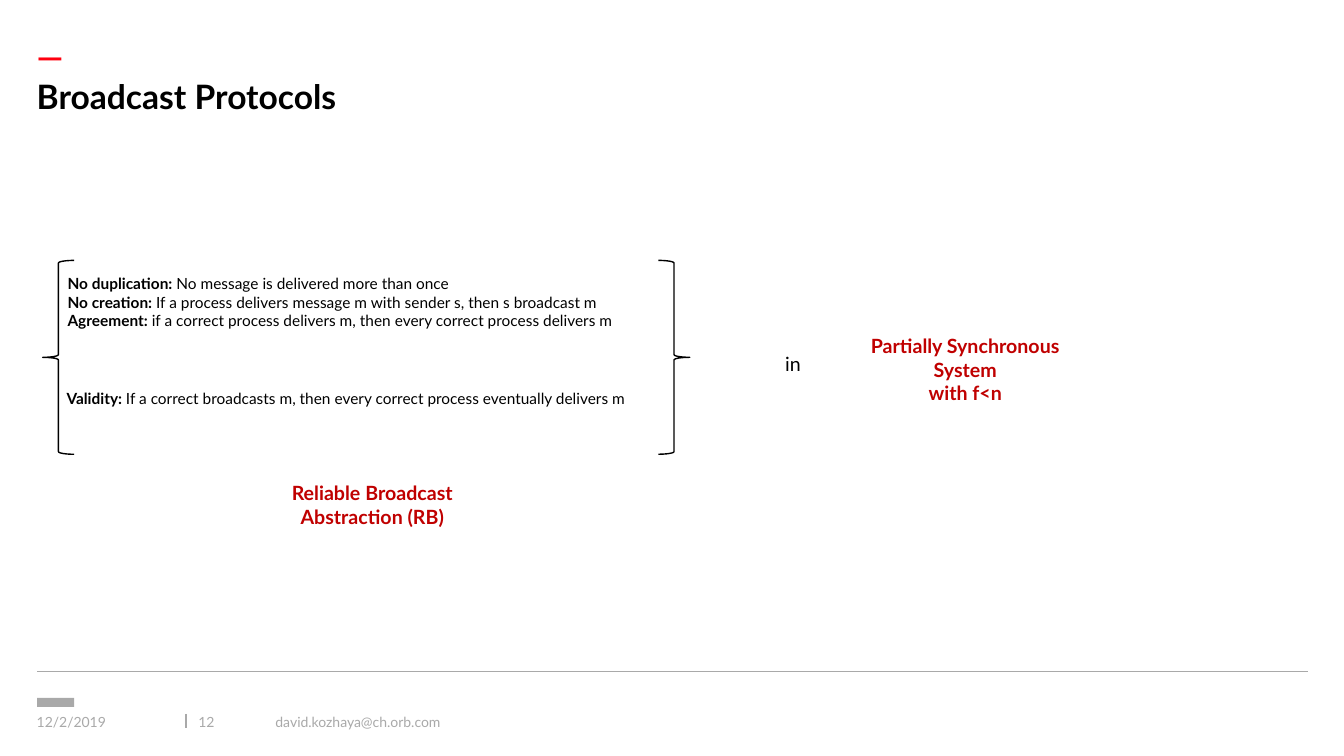
import pptx
import pptx.util
import pptx.dml.color
import pptx.enum.shapes
import pptx.enum.text
from dataclasses import dataclass
from lxml import etree

Pt = pptx.util.Pt
SHAPE = pptx.enum.shapes.MSO_SHAPE
ALIGN = pptx.enum.text.PP_ALIGN
ANCHOR = pptx.enum.text.MSO_ANCHOR


@dataclass(frozen=True)
class Theme:
    font: str = "Lato"
    ink: str = "000000"
    accent: str = "FF000F"
    emphasis: str = "C00000"
    muted: str = "A9A9A9"
    title: float = 24
    label: float = 14
    body: float = 11
    footer: float = 10


T = Theme()


def rgb(value):
    return pptx.dml.color.RGBColor.from_string(value)


def add_text(s, box, paragraphs, size=T.body, color=T.ink, bold=False,
             align=ALIGN.LEFT, anchor=ANCHOR.TOP, inset=0):
    """Each paragraph is a string, or a (bold lead, plain rest) pair."""
    tf = s.shapes.add_textbox(*map(Pt, box)).text_frame
    tf.word_wrap = True
    tf.vertical_anchor = anchor
    tf.margin_left = tf.margin_right = Pt(inset)
    tf.margin_top = tf.margin_bottom = Pt(inset)
    for i, content in enumerate(paragraphs):
        p = tf.paragraphs[0] if i == 0 else tf.add_paragraph()
        p.alignment = align
        if isinstance(content, str):
            runs = [(content, bold)]
        else:
            runs = [(content[0], True), (content[1], False)]
        for text, is_bold in runs:
            r = p.add_run()
            r.text = text
            r.font.name = T.font
            r.font.size = Pt(size)
            r.font.bold = is_bold
            r.font.color.rgb = rgb(color)


def add_rule(s, x1, y1, x2, y2):
    line = s.shapes.add_connector(
        pptx.enum.shapes.MSO_CONNECTOR.STRAIGHT, Pt(x1), Pt(y1), Pt(x2), Pt(y2))
    line.line.color.rgb = rgb(T.muted)
    line.line.width = Pt(1)
    etree.SubElement(line._element.spPr, pptx.oxml.ns.qn("a:effectLst"))


def add_brace(s, kind, x):
    sp = s.shapes.add_shape(kind, Pt(x), Pt(186), Pt(22.5), Pt(138.5))
    sp.shadow.inherit = False
    sp.fill.background()
    sp.line.color.rgb = rgb(T.ink)
    sp.line.width = Pt(1)


def add_footer(s):
    add_rule(s, 26.5, 479.5, 934, 479.5)
    mark = s.shapes.add_shape(SHAPE.RECTANGLE, Pt(26.5), Pt(498.5), Pt(26.5), Pt(6.5))
    mark.shadow.inherit = False
    mark.fill.solid()
    mark.fill.fore_color.rgb = rgb(T.muted)
    mark.line.fill.background()
    add_rule(s, 133, 510, 133, 520)
    for text, x, width in (("12/2/2019", 26.25, 91.5), ("12", 141.75, 53),
                           ("david.kozhaya@ch.orb.com", 196.75, 669)):
        add_text(s, (x, 511, width, 9.5), [text], size=T.footer, color=T.muted,
                 anchor=ANCHOR.MIDDLE)


def add_properties(s):
    add_text(s, (42.25, 190, 433.5, 55.5), [
        ("No duplication: ", "No message is delivered more than once"),
        ("No creation: ", "If a process delivers message m with sender s, then s broadcast m"),
        ("Agreement: ", "if a correct process delivers m, then every correct process delivers m"),
    ], inset=6)
    add_text(s, (41.5, 271.75, 449.5, 29.5), [
        ("Validity: ", "If a correct broadcasts m, then every correct process eventually delivers m"),
    ], inset=6)
    add_brace(s, SHAPE.LEFT_BRACE, 30.5)
    add_brace(s, SHAPE.RIGHT_BRACE, 470.25)


def add_label(s, x, y, width, paragraphs, color=T.emphasis, bold=True):
    add_text(s, (x, y, width, 29.5), paragraphs, size=T.label, color=color,
             bold=bold, align=ALIGN.CENTER, inset=6)


def main():
    prs = pptx.Presentation()
    prs.slide_width, prs.slide_height = Pt(960), Pt(540)
    s = prs.slides.add_slide(prs.slide_layouts[6])
    add_footer(s)
    add_text(s, (19, 34, 57, 12), ["—"], size=T.title, color=T.accent,
             bold=True, anchor=ANCHOR.MIDDLE, inset=7.2)
    add_text(s, (26.25, 54, 907, 31), ["Broadcast Protocols"], size=T.title, bold=True)
    add_properties(s)
    add_label(s, 191.5, 337.75, 149, ["Reliable Broadcast Abstraction (RB)"])
    add_label(s, 612.75, 232.5, 153.5, ["Partially Synchronous System", "with f<n"])
    add_label(s, 496.75, 245.5, 139.5, ["in"], color=T.ink, bold=False)
    prs.save("out.pptx")


if __name__ == "__main__":
    main()
